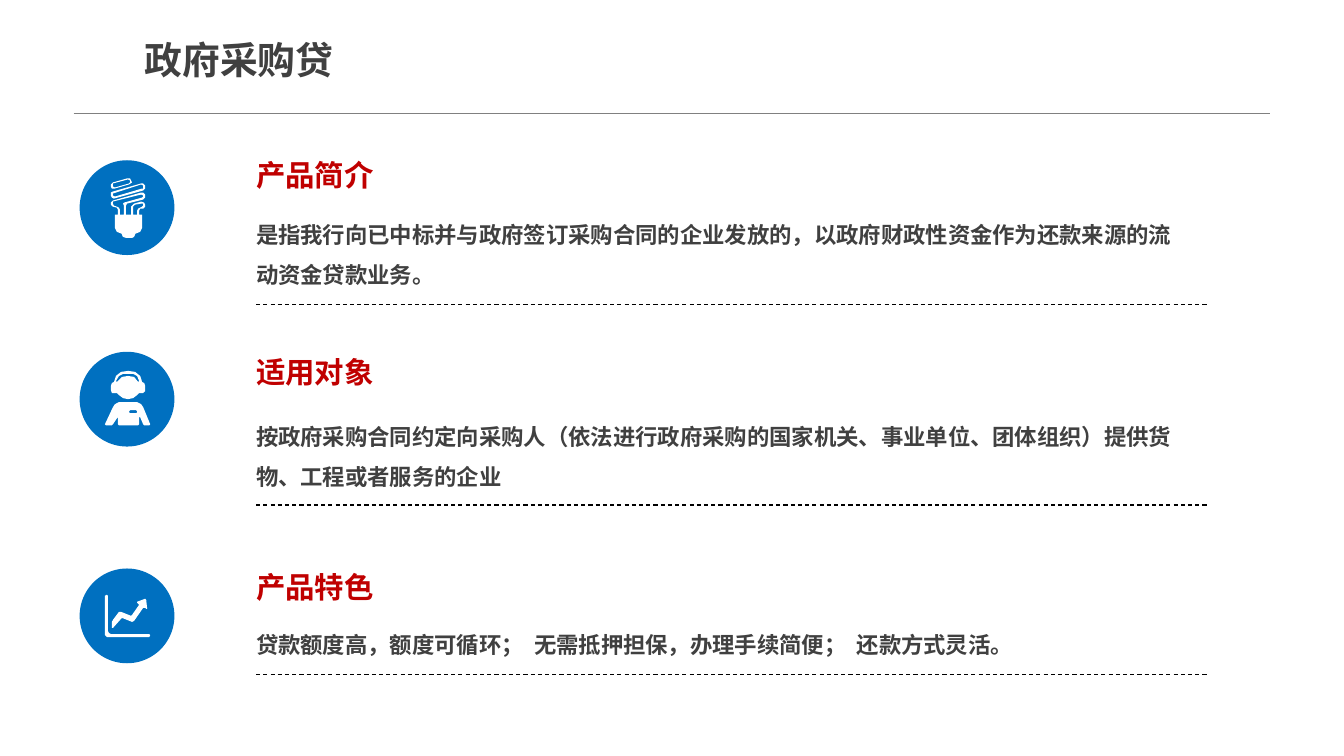
from dataclasses import dataclass

from lxml import etree
from pptx import Presentation
from pptx import util as u
from pptx.dml.color import RGBColor
from pptx.enum import dml, shapes, text
from pptx.oxml.ns import qn


@dataclass(frozen=True)
class Theme:
    font: str = "Noto Sans CJK SC"
    ink: str = "404040"
    heading: str = "C00000"
    badge: str = "0070C0"
    icon: str = "FFFFFF"
    title_rule: str = "808080"
    divider: str = "000000"
    title_size: int = 27
    heading_size: int = 21
    body_size: int = 16


# Icon outlines in hundredths of an inch from the badge corner; inner contours are holes
BULB = [
    # Upper and middle tubes
    [(31, 26), (32, 28), (35, 28), (49, 24), (52, 22), (51, 20), (50, 18), (47, 18),
     (33, 22), (31, 24)],
    [(33, 23), (48, 19), (50, 20), (50, 22), (49, 23), (35, 27), (33, 26), (33, 24)],
    [(31, 32), (31, 35), (32, 37), (34, 38), (63, 30), (65, 28), (65, 25), (63, 23),
     (61, 23), (33, 31)],
    [(61, 24), (63, 25), (63, 28), (62, 28), (35, 36), (33, 35), (33, 33)],
    # Lower tube and socket
    [(65, 44), (64, 42), (61, 41), (54, 43), (51, 46), (51, 54), (46, 54), (46, 45),
     (47, 43), (63, 39), (65, 37), (65, 34), (63, 32), (61, 32), (33, 40), (31, 42),
     (31, 44), (33, 46), (37, 47), (38, 49), (38, 54), (35, 54), (35, 67), (37, 71),
     (42, 73), (42, 74), (43, 76), (46, 77), (52, 77), (54, 76), (55, 74), (55, 73),
     (60, 71), (62, 67), (62, 54), (59, 54), (59, 50), (60, 48), (63, 48), (65, 46)],
    [(43, 43), (44, 45), (44, 54), (40, 54), (40, 49), (39, 47), (37, 46), (34, 45),
     (33, 43), (33, 41), (37, 40), (61, 34), (63, 35), (63, 36), (62, 37), (44, 42)],
    [(62, 46), (60, 47), (58, 48), (57, 50), (57, 54), (53, 54), (53, 46), (55, 44),
     (61, 43), (63, 43), (63, 45)],
]
AGENT = [
    # Head and headset
    [(62, 30), (60, 24), (55, 20), (48, 19), (41, 20), (36, 24), (34, 30), (32, 31),
     (31, 34), (31, 38), (32, 41), (37, 41), (39, 43), (43, 46), (48, 47), (53, 46),
     (57, 43), (59, 41), (63, 41), (65, 39), (65, 34), (64, 31)],
    [(48, 24), (42, 25), (38, 29), (37, 30), (36, 29), (39, 24), (43, 22), (48, 22),
     (53, 22), (57, 24), (59, 29), (58, 30), (54, 25)],
    # Body and pocket
    [(70, 72), (63, 55), (61, 52), (57, 50), (39, 50), (35, 52), (33, 55), (25, 72),
     (26, 73), (32, 73), (33, 72), (37, 66), (38, 65), (38, 72), (39, 73), (58, 73),
     (59, 72), (59, 65), (60, 65), (63, 72), (64, 73), (69, 73)],
    [(57, 60), (56, 61), (50, 61), (49, 60), (49, 59), (50, 58), (56, 58), (57, 59)],
]
GROWTH = [
    # Axes
    [(70, 66), (69, 68), (27, 68), (25, 66), (25, 27), (27, 26), (28, 27), (28, 62),
     (29, 64), (31, 65), (69, 65)],
    # Rising arrow
    [(66, 40), (67, 40), (66, 31), (65, 30), (57, 33), (57, 34), (59, 36), (52, 46),
     (51, 47), (41, 43), (39, 43), (33, 51), (32, 53), (32, 59), (33, 59), (41, 50),
     (42, 49), (52, 53), (54, 52), (63, 39), (65, 39)],
]

# Heading, body, icon, then tops of badge, heading and body, body height, divider
SECTIONS = [
    ("产品简介", "是指我行向已中标并与政府签订采购合同的企业发放的，以政府财政性资金作为还款来源的流动资金贷款业务。",
     BULB, 1.59, 1.49, 1.99, 0.94, 3.02),
    ("适用对象", "按政府采购合同约定向采购人（依法进行政府采购的国家机关、事业单位、团体组织）提供货物、工程或者服务的企业",
     AGENT, 3.49, 3.44, 3.99, 0.94, 5.01),
    ("产品特色", "贷款额度高，额度可循环；  无需抵押担保，办理手续简便；  还款方式灵活。",
     GROWTH, 5.64, 5.58, 6.06, 0.54, 6.69),
]
BADGE_LEFT, BADGE_SIZE = 0.79, 0.94
TEXT_LEFT = 2.41


class SlideBuilder:
    def __init__(self, slide, theme):
        self.slide = slide
        self.theme = theme

    def label(self, words, left, top, width, height, size, color, align=None, spacing=None):
        box = self.slide.shapes.add_textbox(
            u.Inches(left), u.Inches(top), u.Inches(width), u.Inches(height))
        frame = box.text_frame
        frame.word_wrap = True
        frame.auto_size = text.MSO_AUTO_SIZE.SHAPE_TO_FIT_TEXT
        frame.margin_left = frame.margin_right = u.Inches(0.13)
        frame.margin_top = frame.margin_bottom = u.Inches(0.07)
        paragraph = frame.paragraphs[0]
        paragraph.text = words
        paragraph.alignment = align
        paragraph.line_spacing = spacing
        font = paragraph.font
        font.size = u.Pt(size)
        font.bold = True
        font.color.rgb = RGBColor.from_string(color)
        font.name = self.theme.font
        # East Asian glyphs take their own typeface entry
        latin = paragraph._p.find(".//" + qn("a:latin"))
        east_asian = etree.Element(qn("a:ea"), typeface=self.theme.font)
        latin.addnext(east_asian)

    def rule(self, left, right, y, color, weight, dash=None):
        line = self.slide.shapes.add_connector(
            shapes.MSO_CONNECTOR.STRAIGHT,
            u.Inches(left), u.Inches(y), u.Inches(right), u.Inches(y))
        line.line.color.rgb = RGBColor.from_string(color)
        line.line.width = u.Pt(weight)
        line.line.dash_style = dash
        etree.SubElement(line._element.spPr, qn("a:effectLst"))

    def paint(self, shape, color):
        shape.shadow.inherit = False
        shape.fill.solid()
        shape.fill.fore_color.rgb = RGBColor.from_string(color)
        shape.line.fill.background()

    def badge(self, left, top, size):
        circle = self.slide.shapes.add_shape(
            shapes.MSO_SHAPE.OVAL,
            u.Inches(left), u.Inches(top), u.Inches(size), u.Inches(size))
        self.paint(circle, self.theme.badge)

    def icon(self, contours, left, top):
        outline = self.slide.shapes.build_freeform(*contours[0][0], scale=u.Inches(0.01))
        outline.add_line_segments(contours[0][1:])
        for start, *rest in contours[1:]:
            outline.move_to(*start)
            outline.add_line_segments(rest)
        self.paint(outline.convert_to_shape(u.Inches(left), u.Inches(top)), self.theme.icon)


def main():
    deck = Presentation()
    deck.slide_width, deck.slide_height = u.Inches(13.33), u.Inches(7.5)
    theme = Theme()
    page = SlideBuilder(deck.slides.add_slide(deck.slide_layouts[6]), theme)

    # Title and its rule
    page.rule(0.73, 12.6, 1.12, theme.title_rule, 0.25)
    page.label("政府采购贷", 1, 0.29, 2.74, 0.58, theme.title_size, theme.ink,
               align=text.PP_ALIGN.CENTER)

    # Product sections
    for heading, body, icon, badge_top, heading_top, body_top, body_height, divider_y in SECTIONS:
        page.badge(BADGE_LEFT, badge_top, BADGE_SIZE)
        page.icon(icon, BADGE_LEFT, badge_top)
        page.label(heading, TEXT_LEFT, heading_top, 7.88, 0.49,
                   theme.heading_size, theme.heading)
        page.label(body, TEXT_LEFT, body_top, 9.4, body_height,
                   theme.body_size, theme.ink, spacing=1.5)
        page.rule(2.54, 11.99, divider_y, theme.divider, 0.75, dml.MSO_LINE.DASH)

    deck.save("out.pptx")


if __name__ == "__main__":
    main()
